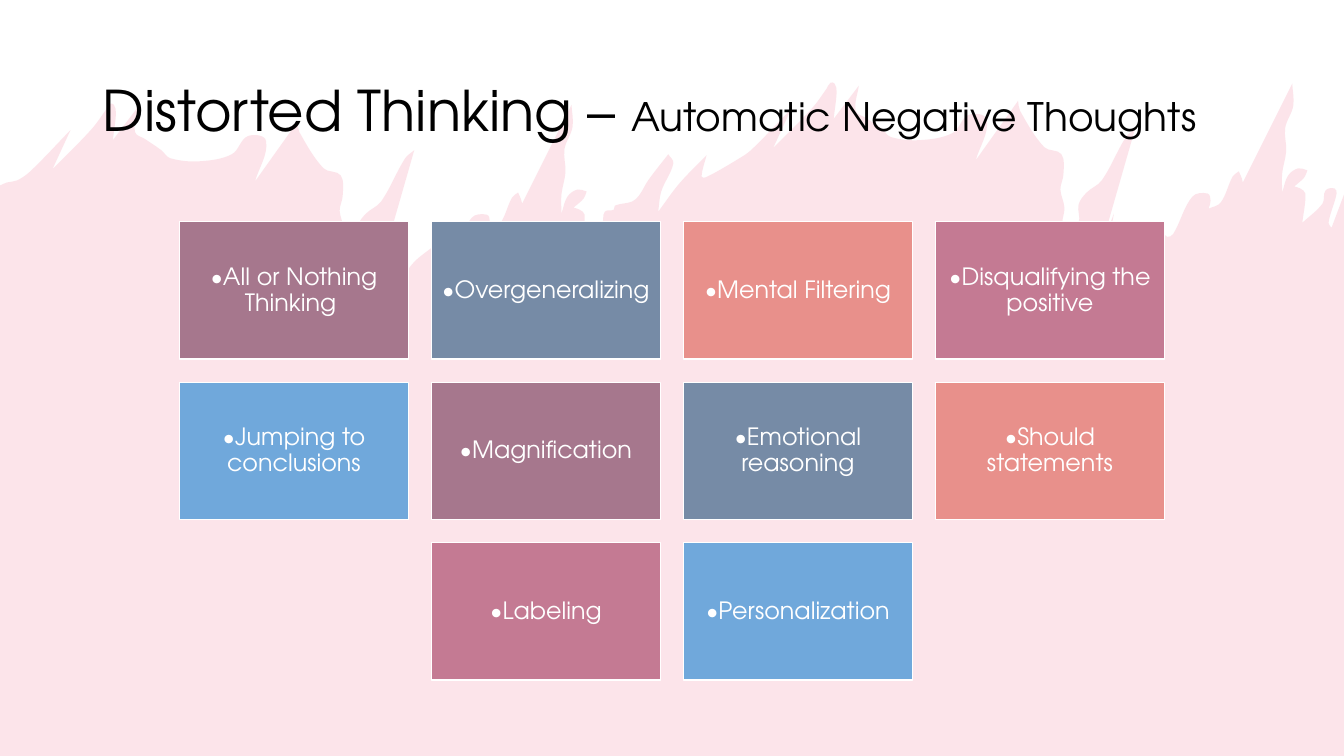
"""Build the slide on distorted thinking: a title over a torn pink edge and ten tiles."""
from dataclasses import dataclass

from lxml import etree
from pptx import Presentation
from pptx.dml.color import RGBColor
from pptx.enum import shapes, text
from pptx.oxml import ns
from pptx.util import Pt

TITLE = ("Distorted Thinking – ", "Automatic Negative Thoughts")
ROWS = [
    ("All or Nothing Thinking ", "Overgeneralizing", "Mental Filtering", "Disqualifying the positive"),
    ("Jumping to conclusions", "Magnification", "Emotional reasoning", "Should statements"),
    ("Labeling", "Personalization"),
]

EDGE_UNIT = 0.72
STROKE_SHIFT = (-715, 21)
EDGE_START = [(0, 184), (7, 181), (17, 179)]
EDGE_STROKE = [
    (745, 149), (785, 108), (767, 147), (806, 107), (820, 88), (824, 82), (828, 83),
    (830, 91), (827, 118), (852, 85), (849, 110), (859, 117), (875, 128), (884, 136),
    (913, 139), (945, 132), (961, 114), (979, 119), (968, 159), (1010, 100), (1012, 110),
    (1036, 146), (1053, 153), (1055, 173), (1052, 188), (1056, 206), (1054, 221),
    (1057, 234), (1070, 221), (1070, 203), (1078, 191), (1093, 179), (1117, 136),
    (1126, 128), (1091, 250), (1105, 212), (1102, 238), (1112, 252), (1115, 252),
    (1124, 241), (1130, 235), (1151, 219), (1154, 230), (1158, 235), (1164, 232),
    (1183, 195), (1198, 192), (1201, 199), (1199, 207), (1211, 201), (1223, 175),
    (1229, 170), (1232, 177), (1233, 181), (1282, 83), (1283, 105), (1275, 127),
    (1276, 150), (1272, 172), (1272, 191), (1278, 174), (1288, 167), (1297, 169),
    (1294, 176), (1284, 185), (1290, 187), (1295, 192), (1292, 221), (1312, 202),
    (1315, 189), (1324, 187),
]
EDGE_MIDDLE = [
    (610, 204), (627, 200), (634, 194), (643, 179), (663, 153), (668, 162), (656, 190),
    (653, 210), (674, 182), (701, 154), (696, 175), (700, 176), (732, 158),
]
EDGE_END = [(1326, 192), (1318, 221), (1321, 226), (1333.33, 193)]


@dataclass(frozen=True)
class Theme:
    """Colours, font and type sizes."""
    font: str = "TeX Gyre Adventor"
    title_size: int = 40
    subtitle_size: int = 28
    tile_size: int = 17
    dark: str = "000000"
    light: str = "FFFFFF"
    pink: str = "F07C98"
    pink_opacity: int = 20
    tiles: tuple = ("A6778D", "768BA6", "E8908B", "C47A93", "70A8DB")


THEME = Theme()
SLIDE_W, SLIDE_H = 960, 540
TILE_W, TILE_H, GAP, TILES_TOP = 163.5, 98.1, 16.5, 158.4


def paint(fill, colour):
    """Give a fill one solid colour."""
    fill.solid()
    fill.fore_color.rgb = RGBColor.from_string(colour)


def add_run(p, words, size, colour):
    """Add one formatted run to a paragraph."""
    r = p.add_run()
    r.text = words
    r.font.name = THEME.font
    r.font.size = Pt(size)
    r.font.color.rgb = RGBColor.from_string(colour)


def tangent(before, here, after, chord):
    """Return the curve direction at a point, keeping sharp tips sharp."""
    if ((here - before) * (after - here).conjugate()).real <= 0:
        return chord
    across = after - before
    return across / abs(across) * abs(chord)


def curve_edge(sp, count):
    """Turn the lines between the first points of an outline into curves."""
    pts = list(sp.element.iter(ns.qn("a:pt")))[:count]
    z = [complex(int(pt.get("x")), int(pt.get("y"))) for pt in pts]
    z = [z[0]] + z + [z[-1]]
    for pt, a, b, c, d in zip(pts[1:], z, z[1:], z[2:], z[3:]):
        controls = (b + tangent(a, b, c, c - b) / 3, c - tangent(b, c, d, c - b) / 3, c)
        line = pt.getparent()
        curve = etree.Element(ns.qn("a:cubicBezTo"))
        for point in controls:
            etree.SubElement(curve, ns.qn("a:pt"), x=str(round(point.real)), y=str(round(point.imag)))
        line.getparent().replace(line, curve)


def add_torn_edge(slide):
    """Draw the pale pink area with its torn upper edge."""
    dx, dy = STROKE_SHIFT
    left_stroke = [(x + dx, y + dy) for x, y in EDGE_STROKE]
    edge = EDGE_START + left_stroke + EDGE_MIDDLE + EDGE_STROKE + EDGE_END
    corners = [(SLIDE_W, SLIDE_H), (0, SLIDE_H)]
    outline = [(x * EDGE_UNIT, y * EDGE_UNIT) for x, y in edge] + corners
    fine = [(x * 100, y * 100) for x, y in outline]
    builder = slide.shapes.build_freeform(*fine[0], scale=Pt(1) / 100)
    builder.add_line_segments(fine[1:], close=True)
    sp = builder.convert_to_shape()
    curve_edge(sp, len(edge))
    sp.shadow.inherit = False
    sp.line.fill.background()
    paint(sp.fill, THEME.pink)
    colour = sp.element.spPr.find(".//" + ns.qn("a:srgbClr"))
    etree.SubElement(colour, ns.qn("a:alpha"), val=str(THEME.pink_opacity * 1000))
    slide.shapes.title.element.addprevious(sp.element)


def add_title(slide):
    """Fill and place the title."""
    sp = slide.shapes.title
    sp.left, sp.top, sp.width, sp.height = Pt(66), Pt(28.8), Pt(828), Pt(104.4)
    tf = sp.text_frame
    tf.auto_size = text.MSO_AUTO_SIZE.NONE
    tf.vertical_anchor = text.MSO_ANCHOR.MIDDLE
    p = tf.paragraphs[0]
    p.alignment = text.PP_ALIGN.LEFT
    p.line_spacing = 0.9
    for words, size in zip(TITLE, (THEME.title_size, THEME.subtitle_size)):
        add_run(p, words, size, THEME.dark)


def add_tile(slide, label, left, top, colour):
    """Add one labelled tile."""
    sp = slide.shapes.add_shape(shapes.MSO_SHAPE.RECTANGLE, Pt(left), Pt(top), Pt(TILE_W), Pt(TILE_H))
    sp.shadow.inherit = False
    paint(sp.fill, colour)
    paint(sp.line.fill, THEME.light)
    sp.line.width = Pt(1)
    tf = sp.text_frame
    tf.word_wrap = True
    tf.vertical_anchor = text.MSO_ANCHOR.MIDDLE
    tf.margin_left = tf.margin_right = tf.margin_top = tf.margin_bottom = Pt(5)
    p = tf.paragraphs[0]
    p.alignment = text.PP_ALIGN.CENTER
    p.line_spacing = 0.9
    add_run(p, "•" + label, THEME.tile_size, THEME.light)


def add_tiles(slide):
    """Lay out the rows of tiles, each row centred on the slide."""
    count = 0
    for row, labels in enumerate(ROWS):
        left = (SLIDE_W - len(labels) * (TILE_W + GAP) + GAP) / 2
        top = TILES_TOP + row * (TILE_H + GAP)
        for column, label in enumerate(labels):
            colour = THEME.tiles[count % len(THEME.tiles)]
            add_tile(slide, label, left + column * (TILE_W + GAP), top, colour)
            count += 1


def main():
    """Build and save the slide."""
    prs = Presentation()
    prs.slide_width, prs.slide_height = Pt(SLIDE_W), Pt(SLIDE_H)
    slide = prs.slides.add_slide(prs.slide_layouts[5])
    paint(slide.background.fill, THEME.light)
    add_torn_edge(slide)
    add_title(slide)
    add_tiles(slide)
    prs.save("out.pptx")


if __name__ == "__main__":
    main()
